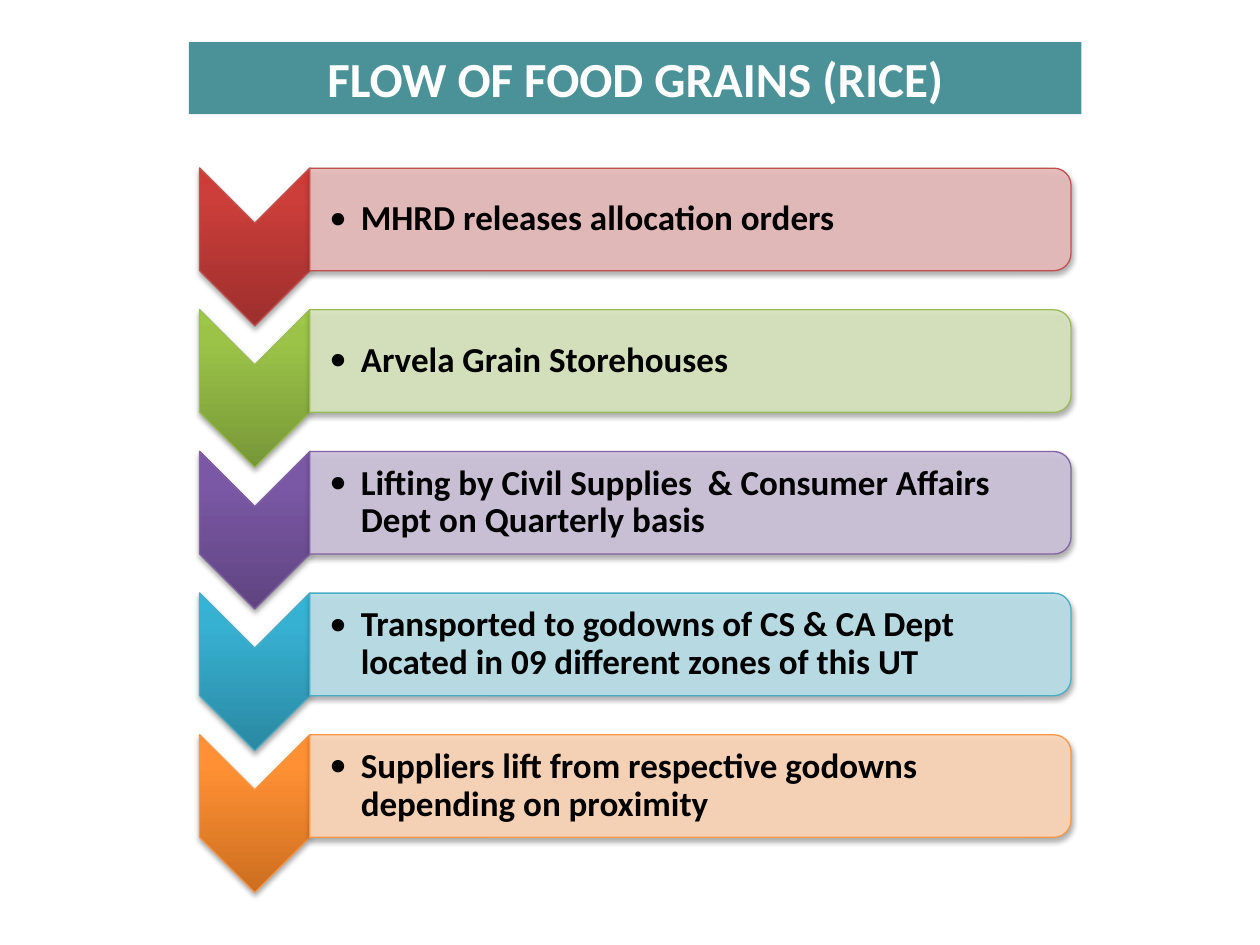
from dataclasses import dataclass

from lxml import etree
from pptx import Presentation
from pptx.dml.color import RGBColor
from pptx.enum.shapes import MSO_SHAPE
from pptx.enum.text import MSO_ANCHOR, PP_ALIGN
from pptx.oxml.ns import qn
from pptx.util import Pt

CHEVRON = MSO_SHAPE.CHEVRON
ROUNDED_BAR = MSO_SHAPE.ROUND_2_SAME_RECTANGLE
MIDDLE = MSO_ANCHOR.MIDDLE
CENTER = PP_ALIGN.CENTER

FONT = "Calibri"
STEP_PITCH = 80.95
FIRST_ARROW_Y = 141.1
FIRST_BAR_Y = 125.4
ARROW_X, ARROW_LENGTH, ARROW_WIDTH = 145.6, 90.2, 63.1
BAR_X, BAR_LENGTH, BAR_HEIGHT = 394.5, 435, 58.6
TEXT_LEFT, TEXT_WIDTH, TEXT_HEIGHT = 177, 432, 52.9


@dataclass
class Step:
    text: str
    line: str
    tint: str
    shades: tuple[str, str, str]


STEPS = [
    Step("MHRD releases allocation orders",
         "C0504D", "E6B9B8", ("9C2F2D", "CB3E3A", "CE3B37")),
    Step("Arvela Grain Storehouses",
         "9BBB59", "D7E4BD", ("779737", "9BC348", "9DC746")),
    Step("Lifting by Civil Supplies  & Consumer Affairs Dept on Quarterly basis",
         "8064A2", "CCC1DA", ("5F4480", "7B58A6", "7C57A8")),
    Step("Transported to godowns of CS & CA Dept located in 09 different zones of this UT",
         "4BACC6", "B7DEE8", ("2A88A2", "37B1D2", "34B4D6")),
    Step("Suppliers lift from respective godowns depending on proximity",
         "F79646", "FCD5B5", ("CC6E20", "FF9034", "FF9136")),
]


def color(value: str) -> RGBColor:
    return RGBColor.from_string(value)


def add_xml(parent, tag: str, **attributes: str):
    return etree.SubElement(parent, qn(tag), attributes)


def add_turned_shape(page, kind, center_x: float, center_y: float,
                     width: float, height: float, line: str):
    shape = page.shapes.add_shape(kind, Pt(center_x - width / 2), Pt(center_y - height / 2),
                                  Pt(width), Pt(height))
    shape.rotation = 90
    shape.line.color.rgb = color(line)
    shape.line.width = Pt(0.75)
    shape.shadow.inherit = False
    effects = shape._element.spPr.find(qn("a:effectLst"))
    shadow = add_xml(effects, "a:outerShdw", blurRad=str(Pt(3.15)), dist=str(Pt(1.8)),
                     dir="5400000", rotWithShape="0")
    black = add_xml(shadow, "a:srgbClr", val="000000")
    add_xml(black, "a:alpha", val="35000")
    return shape


def shade(shape, shades: tuple[str, str, str]) -> None:
    shape.fill.gradient()
    shape.fill.gradient_angle = 90
    gradient = shape._element.spPr.find(qn("a:gradFill"))
    gradient.set("rotWithShape", "0")
    stops = gradient.find(qn("a:gsLst"))
    for stop in list(stops):
        stops.remove(stop)
    for percent, value in zip((0, 80, 100), shades):
        stop = add_xml(stops, "a:gs", pos=str(percent * 1000))
        add_xml(stop, "a:srgbClr", val=value)


def add_span(para, text: str, size: float, value: str) -> None:
    span = para.add_run()
    span.text = text
    span.font.name = FONT
    span.font.size = Pt(size)
    span.font.bold = True
    span.font.color.rgb = color(value)


def add_title(page, text: str) -> None:
    box = page.shapes.add_textbox(Pt(108), Pt(24), Pt(510), Pt(41.2))
    box.fill.solid()
    box.fill.fore_color.rgb = color("4A9297")
    box.text_frame.word_wrap = True
    para = box.text_frame.paragraphs[0]
    para.alignment = CENTER
    add_span(para, text, 28, "FFFFFF")


def add_step_text(page, text: str, center_y: float) -> None:
    box = page.shapes.add_textbox(Pt(TEXT_LEFT), Pt(center_y - TEXT_HEIGHT / 2),
                                  Pt(TEXT_WIDTH), Pt(TEXT_HEIGHT))
    frame = box.text_frame
    frame.word_wrap = True
    frame.vertical_anchor = MIDDLE
    frame.margin_left = Pt(11.2)
    frame.margin_top = frame.margin_right = frame.margin_bottom = Pt(1)
    para = frame.paragraphs[0]
    para.line_spacing = 0.9
    para.space_after = Pt(3)
    properties = para._p.get_or_add_pPr()
    properties.set("marL", str(Pt(18)))
    properties.set("indent", str(Pt(-18)))
    add_xml(properties, "a:buFont", typeface=FONT)
    add_xml(properties, "a:buChar", char="•")
    add_span(para, text, 20, "000000")


def add_step(page, step: Step, offset: float) -> None:
    arrow = add_turned_shape(page, CHEVRON, ARROW_X, FIRST_ARROW_Y + offset,
                             ARROW_LENGTH, ARROW_WIDTH, step.line)
    shade(arrow, step.shades)
    bar_y = FIRST_BAR_Y + offset
    bar = add_turned_shape(page, ROUNDED_BAR, BAR_X, bar_y, BAR_HEIGHT, BAR_LENGTH, step.line)
    bar.fill.solid()
    bar.fill.fore_color.rgb = color(step.tint)
    tint = bar._element.spPr.find(qn("a:solidFill")).find(qn("a:srgbClr"))
    add_xml(tint, "a:alpha", val="90000")
    add_step_text(page, step.text, bar_y)


def main() -> None:
    deck = Presentation()
    deck.slide_width, deck.slide_height = Pt(720), Pt(540)
    page = deck.slides.add_slide(deck.slide_layouts[6])
    for index, step in enumerate(STEPS):
        add_step(page, step, index * STEP_PITCH)
    add_title(page, "FLOW OF FOOD GRAINS (RICE)")
    deck.save("out.pptx")


if __name__ == "__main__":
    main()
